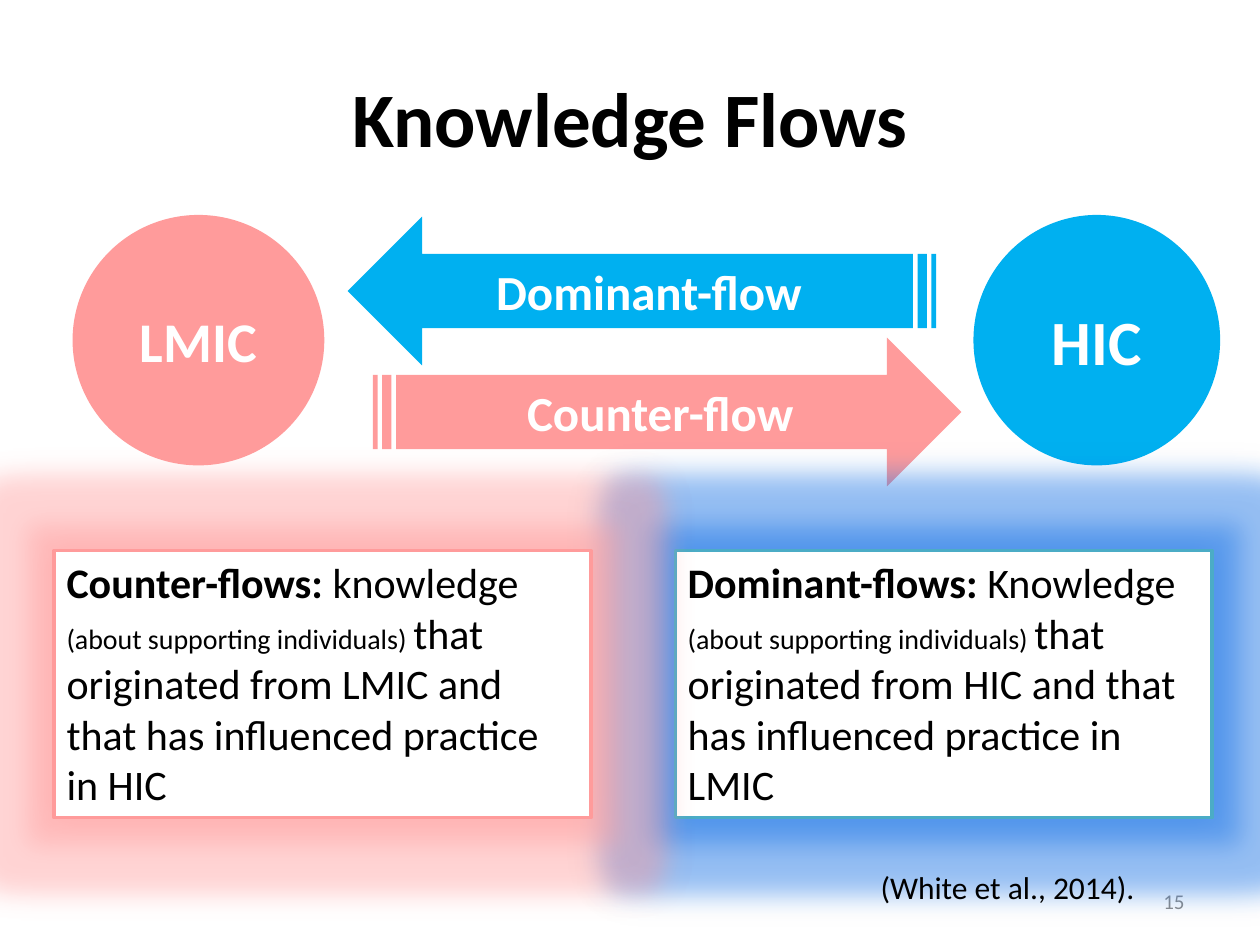
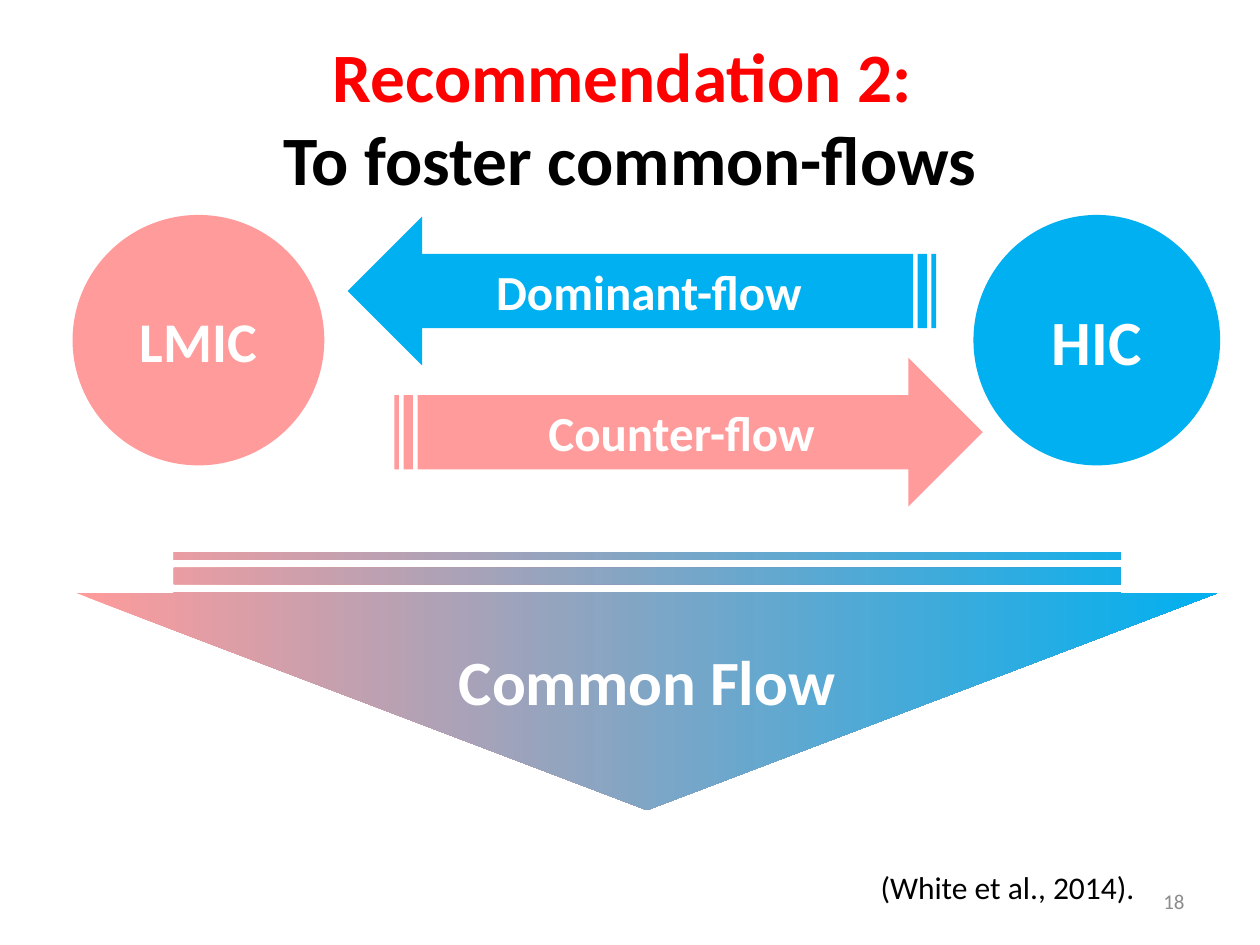
from lxml.etree import SubElement
from pptx import Presentation
from pptx.dml.color import RGBColor
from pptx.enum.shapes import MSO_SHAPE
from pptx.enum.text import MSO_ANCHOR, MSO_AUTO_SIZE, PP_ALIGN
from pptx.oxml.ns import qn
from pptx.util import Inches, Pt

# Shared look
FONT = "Calibri"
BLACK = RGBColor(0, 0, 0)
WHITE = RGBColor(255, 255, 255)
GRAY = RGBColor(0x8C, 0x8C, 0x8C)
RED = RGBColor(255, 0, 0)
PINK = RGBColor(0xFF, 0x9B, 0x9B)
BLUE = RGBColor(0x00, 0xB0, 0xF0)
TEAL = RGBColor(0x4B, 0xAC, 0xC6)
GLOW = RGBColor(0x19, 0x73, 0xE6)

# Content
CITE = "(White et al., 2014)."
CIRCLES = [
    ("HIC", 36, BLUE, (7.74, 1.72, 1.93, 1.96)),
    ("LMIC", 32, PINK, (0.59, 1.72, 1.97, 1.96)),
]
DOMINANT = ("Dominant-flow", BLUE, 2.76, 1.72, True)
SLIDES = [
    {
        "title": [("Knowledge Flows", BLACK)], "size": 44, "number": "15",
        "flows": [("Counter-flow", PINK, 2.96, 2.68, False), DOMINANT],
        "boxes": [
            ("Dominant-flows: ", "Knowledge ", "HIC", "LMIC", 5.36, TEAL, GLOW),
            ("Counter-flows: ", "knowledge ", "LMIC", "HIC", 0.43, PINK, PINK),
        ],
    },
    {
        "title": [("Recommendation 2: ", RED), ("To foster common-flows", BLACK)],
        "size": 39.6, "number": "18",
        "flows": [DOMINANT, ("Counter-flow", PINK, 3.13, 2.84, False)],
        "common": "Common Flow",
    },
]


def style(run, size, color, bold=False):
    font = run.font
    font.name, font.size, font.bold = FONT, Pt(size), bold
    font.color.rgb = color


def write(shape, text, size, color, align, bold=False):
    para = shape.text_frame.paragraphs[0]
    para.text, para.alignment = text, align
    style(para.runs[0], size, color, bold)


def add_text(slide, area, *args, **kinds):
    box = slide.shapes.add_textbox(*map(Inches, area))
    write(box, *args, **kinds)
    return box


def add_shape(slide, kind, area, fill=None, line=None):
    shape = slide.shapes.add_shape(kind, *map(Inches, area))
    shape.shadow.inherit = False
    if fill is not None:
        shape.fill.solid()
        shape.fill.fore_color.rgb = fill
    if line is None:
        shape.line.fill.background()
    else:
        shape.line.color.rgb = line
        shape.line.width = Pt(2)
    shape.text_frame.vertical_anchor = MSO_ANCHOR.MIDDLE
    return shape


def add_glow(shape, color):
    effects = shape.element.spPr.find(qn("a:effectLst"))
    layers = [("a:glow", "rad", 0.4), ("a:outerShdw", "blurRad", 0.25)]
    for tag, key, reach in layers:
        layer = SubElement(effects, qn(tag), {key: str(Inches(reach))})
        tint = SubElement(layer, qn("a:srgbClr"), val=str(color))
        SubElement(tint, qn("a:alpha"), val="40000")


def add_title(slide, lines, size):
    title = slide.shapes.title
    title.left, title.top, title.width, title.height = map(Inches, (0.5, 0.3, 9, 1.25))
    title.text_frame.vertical_anchor = MSO_ANCHOR.MIDDLE
    para = title.text_frame.paragraphs[0]
    para.alignment = PP_ALIGN.CENTER
    for i, (text, color) in enumerate(lines):
        if i:
            para.add_line_break()
        run = para.add_run()
        run.text = text
        style(run, size, color, True)


def add_flow(slide, text, color, left, top, flip):
    arrow = add_shape(slide, MSO_SHAPE.STRIPED_RIGHT_ARROW, (left, top, 4.67, 1.18), color)
    if flip:
        arrow.element.spPr.xfrm.set("flipH", "1")
    write(arrow, text, 28, WHITE, PP_ALIGN.CENTER, True)


def add_box(slide, head, lead, source, target, left, line, glow):
    box = add_shape(slide, MSO_SHAPE.RECTANGLE, (left, 4.37, 4.26, 2.12), WHITE, line)
    add_glow(box, glow)
    box.text_frame.vertical_anchor = MSO_ANCHOR.TOP
    box.text_frame.auto_size = MSO_AUTO_SIZE.SHAPE_TO_FIT_TEXT
    write(box, head, 24, BLACK, PP_ALIGN.LEFT, True)
    rest = f"that originated from {source} and that has influenced practice in {target}"
    for text, size in [(lead, 24), ("(about supporting individuals) ", 16), (rest, 24)]:
        run = box.text_frame.paragraphs[0].add_run()
        run.text = text
        style(run, size, BLACK)


def add_common(slide, text):
    # Wide arrow turned to point down, fading from pink to blue
    arrow = add_shape(slide, MSO_SHAPE.STRIPED_RIGHT_ARROW, (4.11, 0.88, 2.05, 9.05))
    arrow.rotation = 90
    arrow.adjustments[0], arrow.adjustments[1] = 0.83, 0.84
    arrow.fill.gradient()
    arrow.fill.gradient_angle = 90
    for stop, place, color in zip(arrow.fill.gradient_stops, (0, 1), (PINK, BLUE)):
        stop.position, stop.color.rgb = place, color
    label = add_text(slide, (3.44, 5.05, 3.39, 0.71), text, 36, WHITE, PP_ALIGN.CENTER, bold=True)
    label.text_frame.word_wrap = True


def build(deck, data):
    slide = deck.slides.add_slide(deck.slide_layouts[5])
    add_title(slide, data["title"], data["size"])
    number = add_text(slide, (7.17, 6.95, 2.33, 0.4), data["number"], 12, GRAY, PP_ALIGN.RIGHT)
    number.text_frame.word_wrap = True
    number.text_frame.vertical_anchor = MSO_ANCHOR.MIDDLE

    # Regions and the flows between them
    for text, size, color, area in CIRCLES:
        circle = add_shape(slide, MSO_SHAPE.OVAL, area, color, color)
        write(circle, text, size, WHITE, PP_ALIGN.CENTER, True)
    if "common" in data:
        add_common(slide, data["common"])
    for flow in data["flows"]:
        add_flow(slide, *flow)

    # Definitions and citation
    for box in data.get("boxes", []):
        add_box(slide, *box)
    cite = add_text(slide, (6.89, 6.84, 2.24, 0.4), CITE, 18, BLACK, PP_ALIGN.LEFT)
    cite.text_frame.word_wrap = False


def main():
    deck = Presentation()
    deck.slide_width, deck.slide_height = Inches(10), Inches(7.5)
    for data in SLIDES:
        build(deck, data)
    deck.save("out.pptx")


if __name__ == "__main__":
    main()
